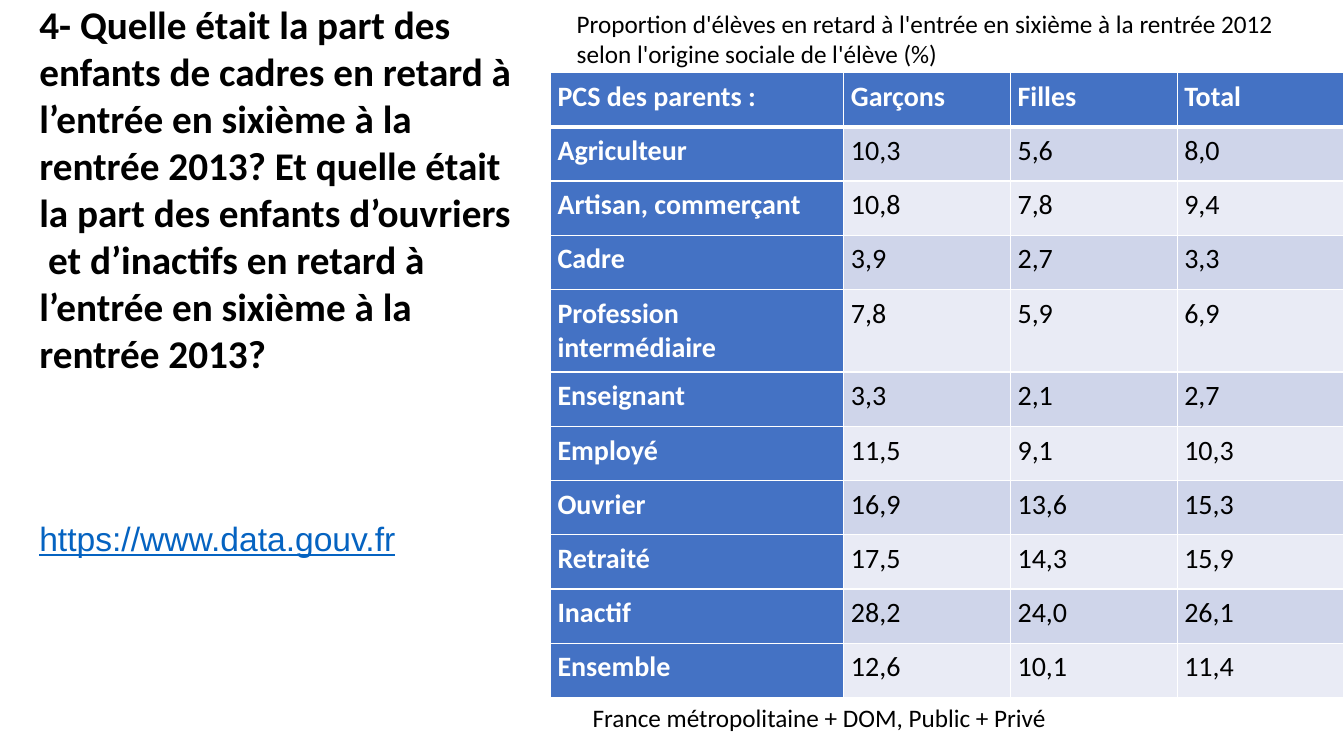
from lxml.etree import SubElement
from pptx import Presentation
from pptx.dml.color import RGBColor
from pptx.enum.text import MSO_ANCHOR, MSO_AUTO_SIZE, PP_ALIGN
from pptx.oxml import parse_xml
from pptx.oxml.ns import nsdecls, qn
from pptx.util import Inches, Pt

COLORS = {"text": "000000", "link": "0563C1", "white": "FFFFFF",
          "head": "4472C4", "odd": "CFD5EA", "even": "E9EBF5"}
NO_STYLE_NO_GRID = "{2D5ABB26-0587-4C30-8999-92F81FD0307C}"
NBSP = chr(160)

QUESTION = ("4- Quelle était la part des enfants de cadres en retard à l’entrée en "
            "sixième à la rentrée 2013? Et quelle était la part des enfants "
            f"d’ouvriers {NBSP}et d’inactifs en retard à l’entrée en sixième à la "
            "rentrée 2013?")
SOURCE = "https://www.data.gouv.fr"
CAPTION = ("Proportion d'élèves en retard à l'entrée en sixième à la rentrée 2012 "
           "selon l'origine sociale de l'élève (%)")
SCOPE = "France métropolitaine + DOM, Public + Privé"
ROWS = [
    ("PCS des parents :", "Garçons", "Filles", "Total"),
    ("Agriculteur", "10,3", "5,6", "8,0"),
    ("Artisan, commerçant", "10,8", "7,8", "9,4"),
    ("Cadre", "3,9", "2,7", "3,3"),
    ("Profession intermédiaire", "7,8", "5,9", "6,9"),
    ("Enseignant", "3,3", "2,1", "2,7"),
    ("Employé", "11,5", "9,1", "10,3"),
    ("Ouvrier", "16,9", "13,6", "15,3"),
    ("Retraité", "17,5", "14,3", "15,9"),
    ("Inactif", "28,2", "24,0", "26,1"),
    ("Ensemble", "12,6", "10,1", "11,4"),
]
TWO_LINE_ROW = 4


def rgb(name):
    return RGBColor.from_string(COLORS[name])


def style(p, size, color="text", bold=False, name="Calibri", underline=False):
    for r in p.runs:
        f = r.font
        f.name, f.size, f.bold, f.underline = name, Pt(size), bold, underline
        f.color.rgb = rgb(color)


def fill_cell(cell, text, size, color="text", bold=False):
    cell.text = text
    cell.margin_left = cell.margin_right = Inches(0.07)
    cell.margin_top = cell.margin_bottom = Inches(0.07)
    style(cell.text_frame.paragraphs[0], size, color, bold)


def underline_cell(cell, width):
    """Draw a white bottom border of the given width in points."""
    ln = parse_xml(f'<a:lnB {nsdecls("a")} w="{Pt(width)}"/>')
    SubElement(SubElement(ln, qn("a:solidFill")), qn("a:srgbClr"), val=COLORS["white"])
    cell._tc.get_or_add_tcPr().insert(0, ln)


def add_question(s, x, y, w, h):
    sp = s.shapes.title
    sp.left, sp.top, sp.width, sp.height = map(Inches, (x, y, w, h))
    tf = sp.text_frame
    tf.text = QUESTION
    tf.word_wrap, tf.auto_size = True, MSO_AUTO_SIZE.NONE
    tf.vertical_anchor = MSO_ANCHOR.TOP
    tf.margin_top = tf.margin_bottom = 0
    link = tf.add_paragraph()
    link.text = SOURCE
    for p in tf.paragraphs:
        p.alignment, p.line_spacing, p.space_before = PP_ALIGN.LEFT, 1.0, Pt(0)
    link.space_before = Pt(101)
    style(tf.paragraphs[0], 28, bold=True)
    style(link, 24, "link", name="Arial", underline=True)


def add_rates(s, x, y, w, h, first_col=2.91, tall_row=0.81):
    n_rows, n_cols = len(ROWS), len(ROWS[0])
    table = s.shapes.add_table(n_rows, n_cols, *map(Inches, (x, y, w, h))).table
    table.first_col = True
    for j, col in enumerate(table.columns):
        col.width = Inches((w - first_col) / (n_cols - 1) if j else first_col)
    for i, values in enumerate(ROWS):
        table.rows[i].height = Inches(
            tall_row if i == TWO_LINE_ROW else (h - tall_row) / (n_rows - 1))
        for j, value in enumerate(values):
            cell = table.cell(i, j)
            header = i == 0 or j == 0
            fill_cell(cell, value, 20, "white" if header else "text", header)
            cell.fill.solid()
            cell.fill.fore_color.rgb = rgb("head" if header else "odd" if i % 2 else "even")
            if i == 0:
                underline_cell(cell, 3)


def add_caption(s, x, y, w, h, text_row=0.75):
    table = s.shapes.add_table(2, 1, *map(Inches, (x, y, w, h))).table
    table.first_row = table.horz_banding = False
    table._tbl.tblPr.find(qn("a:tableStyleId")).text = NO_STYLE_NO_GRID
    table.rows[0].height, table.rows[1].height = Inches(text_row), Inches(h - text_row)
    fill_cell(table.cell(0, 0), CAPTION, 18)


def add_scope(s, x, y, w, h):
    tf = s.shapes.add_textbox(*map(Inches, (x, y, w, h))).text_frame
    tf.text = SCOPE
    tf.word_wrap = False
    style(tf.paragraphs[0], 18)


def main():
    prs = Presentation()
    prs.slide_width, prs.slide_height = Inches(13.33), Inches(7.5)
    s = prs.slides.add_slide(prs.slide_layouts[5])
    add_question(s, 0.29, 0, 5.03, 5.68)
    add_rates(s, 5.46, 0.72, 7.87, 6.19)
    add_caption(s, 5.65, 0.02, 7.26, 1.18)
    add_scope(s, 5.78, 6.92, 4.83, 0.4)
    prs.save("out.pptx")


if __name__ == "__main__":
    main()
